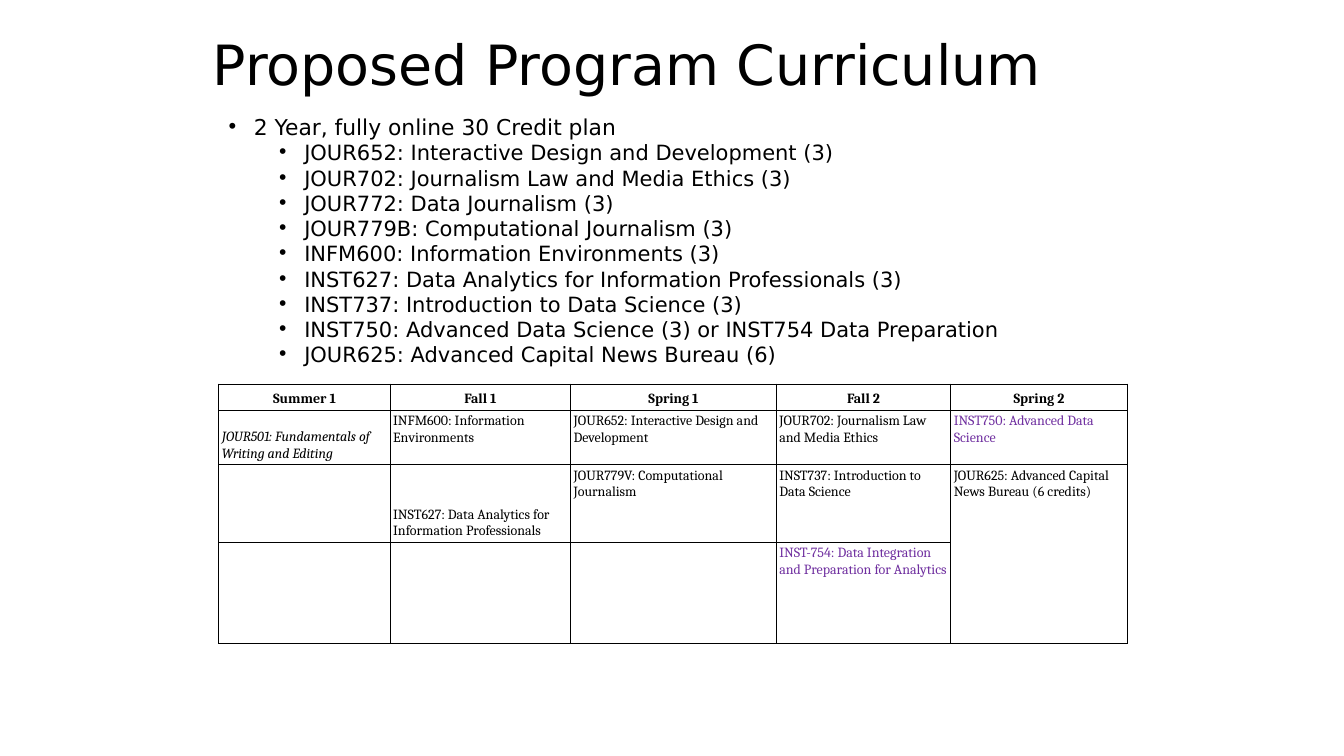
from dataclasses import dataclass

from lxml import etree
from pptx import Presentation
from pptx.dml.color import RGBColor
from pptx.enum.text import MSO_ANCHOR, MSO_AUTO_SIZE, PP_ALIGN
from pptx.oxml.ns import qn
from pptx.util import Inches, Pt

TOP, MID, LOW = MSO_ANCHOR.TOP, MSO_ANCHOR.MIDDLE, MSO_ANCHOR.BOTTOM
LEFT, CENTER = PP_ALIGN.LEFT, PP_ALIGN.CENTER
NO_FIT = MSO_AUTO_SIZE.NONE

TITLE = "Proposed Program Curriculum"
PLAN = "2 Year, fully online 30 Credit plan"
COURSES = [
    "JOUR652: Interactive Design and Development (3)",
    "JOUR702: Journalism Law and Media Ethics (3)",
    "JOUR772: Data Journalism (3)",
    "JOUR779B: Computational Journalism (3)",
    "INFM600: Information Environments (3)",
    "INST627: Data Analytics for Information Professionals (3)",
    "INST737: Introduction to Data Science (3)",
    "INST750: Advanced Data Science (3) or INST754 Data Preparation",
    "JOUR625: Advanced Capital News Bureau (6)",
]
TERMS = [
    ["Summer 1", "Fall 1", "Spring 1", "Fall 2", "Spring 2"],
    ["JOUR501: Fundamentals of Writing and Editing",
     "INFM600: Information Environments",
     "JOUR652: Interactive Design and Development",
     "JOUR702: Journalism Law and Media Ethics",
     "INST750: Advanced Data Science"],
    ["", "INST627: Data Analytics for Information Professionals",
     "JOUR779V: Computational Journalism",
     "INST737: Introduction to Data Science",
     "JOUR625: Advanced Capital News Bureau (6 credits)"],
    ["", "", "", "INST-754: Data Integration and Preparation for Analytics", ""],
]
COLS = [1.7, 1.79, 2.04, 1.73, 1.75]
ROWS = [0.26, 0.54, 0.77, 1]
ITALIC = {(1, 0)}
BOTTOM = {(1, 0), (2, 1)}
ACCENT = {(1, 4), (3, 3)}


@dataclass(frozen=True)
class Theme:
    """Colours, fonts and type sizes of the slide."""
    ink: str = "000000"
    accent: str = "7030A0"
    sans: str = "DejaVu Sans"
    serif: str = "Cambria"
    title: float = 39.6
    plan: float = 15.6
    course: float = 15
    cell: float = 10
    rule: float = 0.75


THEME = Theme()


def write(par, text, size, font=THEME.sans, color=THEME.ink, bold=False,
          italic=False, align=LEFT, line=None, before=0, indent=None):
    """Fill one paragraph with formatted text."""
    par.alignment = align
    par.space_before = Pt(before)
    if line:
        par.line_spacing = line
    if indent is not None:
        props = par._p.get_or_add_pPr()
        props.set("marL", str(Inches(indent)))
        props.set("indent", str(Inches(-0.25)))
        etree.SubElement(props, qn("a:buFont")).set("typeface", "Arial")
        etree.SubElement(props, qn("a:buChar")).set("char", "•")
    run = par.add_run()
    run.text = text
    face = run.font
    face.name, face.size = font, Pt(size)
    face.bold, face.italic = bold, italic
    face.color.rgb = RGBColor.from_string(color)


def add_title(slide):
    """Place and format the title."""
    box = slide.shapes.title
    box.left, box.top = Inches(2.01), Inches(0.4)
    box.width, box.height = Inches(11.03), Inches(0.54)
    frame = box.text_frame
    frame.auto_size, frame.vertical_anchor = NO_FIT, MID
    write(frame.paragraphs[0], TITLE, THEME.title, line=0.9)


def add_list(slide):
    """Add the plan and its bulleted courses."""
    box = slide.shapes.add_textbox(
        Inches(2.17), Inches(1.15), Inches(9), Inches(2.54))
    frame = box.text_frame
    frame.word_wrap = True
    write(frame.paragraphs[0], PLAN, THEME.plan, line=0.7, indent=0.25)
    for course in COURSES:
        par = frame.add_paragraph()
        par.level = 1
        write(par, course, THEME.course, line=0.7, before=5.4, indent=0.75)


def frame_cell(cell):
    """Rule all four sides of a cell."""
    cell.fill.background()
    props = cell._tc.get_or_add_tcPr()
    for spot, side in enumerate(("a:lnL", "a:lnR", "a:lnT", "a:lnB")):
        edge = etree.Element(qn(side), w=str(Pt(THEME.rule)))
        fill = etree.SubElement(edge, qn("a:solidFill"))
        etree.SubElement(fill, qn("a:srgbClr")).set("val", THEME.ink)
        props.insert(spot, edge)


def add_terms(slide):
    """Add the table of courses by term."""
    table = slide.shapes.add_table(
        len(ROWS), len(COLS), Inches(2.17), Inches(3.81),
        Inches(sum(COLS)), Inches(sum(ROWS))).table
    table.first_row = table.horz_banding = False
    for col, width in zip(table.columns, COLS):
        col.width = Inches(width)
    for row, height in zip(table.rows, ROWS):
        row.height = Inches(height)
    table.cell(2, 4).merge(table.cell(3, 4))
    for r, row in enumerate(TERMS):
        for c, text in enumerate(row):
            cell, head, spot = table.cell(r, c), r == 0, (r, c)
            cell.margin_left = cell.margin_right = Inches(0.03)
            cell.margin_top = cell.margin_bottom = Inches(0.03)
            cell.vertical_anchor = LOW if head or spot in BOTTOM else TOP
            frame_cell(cell)
            if text:
                write(cell.text_frame.paragraphs[0], text, THEME.cell,
                      font=THEME.serif, bold=head, italic=spot in ITALIC,
                      color=THEME.accent if spot in ACCENT else THEME.ink,
                      align=CENTER if head else LEFT)


def main():
    """Build and save the slide."""
    deck = Presentation()
    deck.slide_width, deck.slide_height = Inches(13.33), Inches(7.5)
    slide = deck.slides.add_slide(deck.slide_layouts[5])
    add_title(slide)
    add_list(slide)
    add_terms(slide)
    deck.save("out.pptx")


if __name__ == "__main__":
    main()
